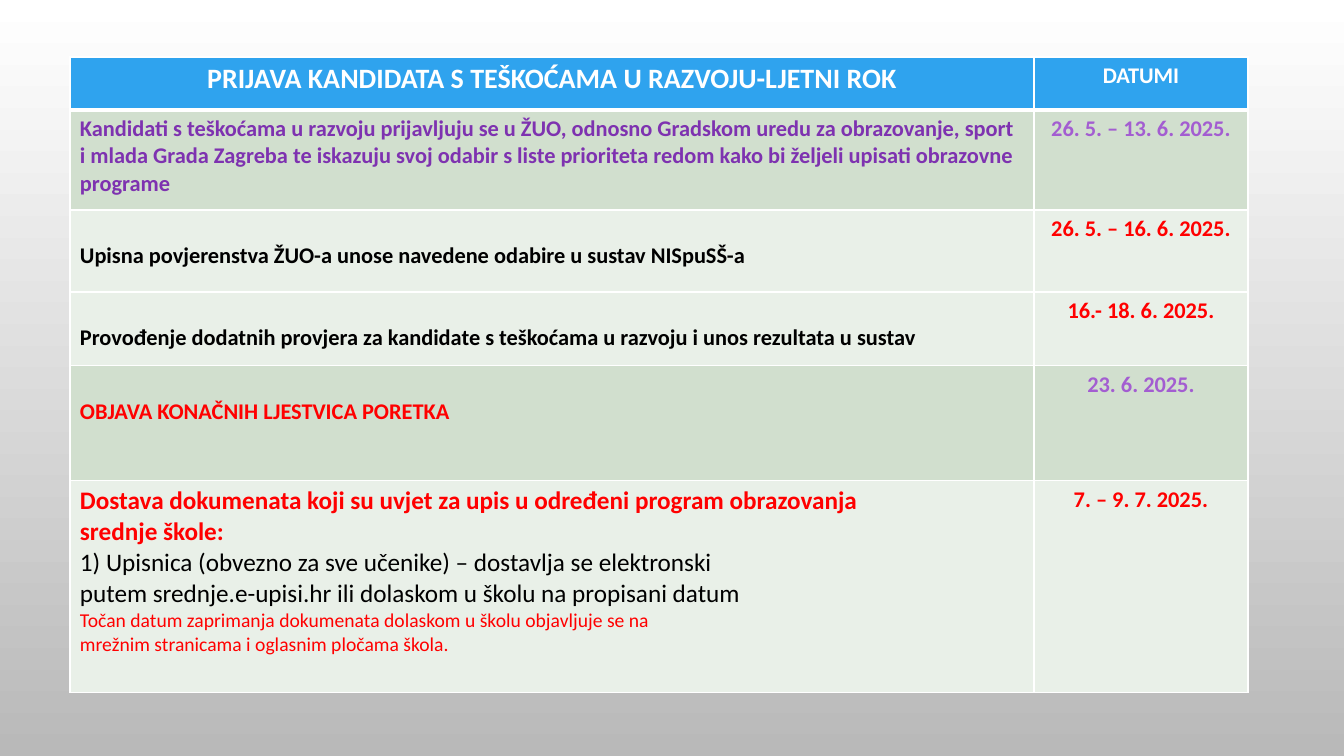
from lxml import etree
from pptx import Presentation
from pptx import util as u
from pptx.dml.color import RGBColor
from pptx.enum import text
from pptx.oxml import ns

WHITE = RGBColor(0xFF, 0xFF, 0xFF)
GREY = RGBColor(0xB9, 0xB9, 0xB9)
BLUE = RGBColor(0x2F, 0xA3, 0xEE)
SAGE = RGBColor(0xD1, 0xDF, 0xCE)
PALE = RGBColor(0xE9, 0xF0, 0xE8)
PURPLE = RGBColor(0x7E, 0x32, 0xB0)
LILAC = RGBColor(0xA3, 0x5D, 0xD1)
RED = RGBColor(0xFF, 0x00, 0x00)
BLACK = RGBColor(0x00, 0x00, 0x00)

LEFT, CENTER, JUSTIFY = (
    text.PP_ALIGN.LEFT, text.PP_ALIGN.CENTER, text.PP_ALIGN.JUSTIFY)

# Content: a line is (wording, size, bold, colour, alignment)
DOCUMENTS = [
    ("Dostava dokumenata koji su uvjet za upis u određeni program obrazovanja",
     18, True, RED, LEFT),
    ("srednje škole:", 18, True, RED, LEFT),
    ("1) Upisnica (obvezno za sve učenike) – dostavlja se elektronski",
     18, False, BLACK, LEFT),
    ("putem srednje.e-upisi.hr ili dolaskom u školu na propisani datum",
     18, False, BLACK, LEFT),
    ("Točan datum zaprimanja dokumenata dolaskom u školu objavljuje se na",
     14, False, RED, JUSTIFY),
    ("mrežnim stranicama i oglasnim pločama škola.", 14, False, RED, JUSTIFY),
]

# A row is (height, fill, top inset of the step, step lines, date, date colour)
SCHEDULE = [
    (53, BLUE, 5,
     [("PRIJAVA KANDIDATA S TEŠKOĆAMA U RAZVOJU-LJETNI ROK",
       20, True, WHITE, CENTER)],
     "DATUMI", WHITE),
    (100, SAGE, 5,
     [("Kandidati s teškoćama u razvoju prijavljuju se u ŽUO, odnosno Gradskom "
       "uredu za obrazovanje, sport i mlada Grada Zagreba te iskazuju svoj "
       "odabir s liste prioriteta redom kako bi željeli upisati obrazovne "
       "programe", 16, True, PURPLE, LEFT)],
     "26. 5. – 13. 6. 2025.", LILAC),
    (82, PALE, 32,
     [("Upisna povjerenstva ŽUO-a unose navedene odabire u sustav NISpuSŠ-a",
       16, True, BLACK, LEFT)],
     "26. 5. – 16. 6. 2025.", RED),
    (74, PALE, 32,
     [("Provođenje dodatnih provjera za kandidate s teškoćama u razvoju i unos "
       "rezultata u sustav", 16, True, BLACK, LEFT)],
     "16.- 18. 6. 2025.", RED),
    (115, SAGE, 32,
     [("OBJAVA KONAČNIH LJESTVICA PORETKA", 16, True, RED, LEFT)],
     "23. 6. 2025.", LILAC),
    (212, PALE, 5, DOCUMENTS, "7. – 9. 7. 2025.", RED),
]
COLUMNS = (964, 214)
TABLE_LEFT, TABLE_TOP = 70, 57
SLIDE_SIZE = (1344, 756)


def px(length):
    return u.Emu(round(length * 914400 / 100.8))


def set_attributes(target, values):
    for name, value in values.items():
        setattr(target, name, value)


def add_borders(cell, widths):
    properties = cell._tc.get_or_add_tcPr()
    for side, width in widths.items():
        line = etree.SubElement(
            properties, ns.qn(f"a:ln{side}"), w=str(u.Pt(width)))
        solid = etree.SubElement(line, ns.qn("a:solidFill"))
        etree.SubElement(solid, ns.qn("a:srgbClr"), val=str(WHITE))


def fill_cell(cell, lines, fill, top_inset, borders):
    add_borders(cell, borders)
    cell.fill.solid()
    cell.fill.fore_color.rgb = fill
    set_attributes(cell, {
        "margin_left": px(10), "margin_right": px(10),
        "margin_top": px(top_inset), "margin_bottom": px(5),
        "vertical_anchor": text.MSO_ANCHOR.TOP})
    for index, (wording, size, bold, colour, alignment) in enumerate(lines):
        frame = cell.text_frame
        paragraph = frame.add_paragraph() if index else frame.paragraphs[0]
        paragraph.alignment = alignment
        run = paragraph.add_run()
        run.text = wording
        set_attributes(run.font, {
            "name": "Calibri", "size": u.Pt(size), "bold": bold})
        run.font.color.rgb = colour


def main():
    deck = Presentation()
    deck.slide_width, deck.slide_height = map(px, SLIDE_SIZE)
    slide = deck.slides.add_slide(deck.slide_layouts[6])

    # Background gradient, white at the top
    backdrop = slide.background.fill
    backdrop.gradient()
    backdrop.gradient_angle = 270
    for stop, position, colour in zip(
            backdrop.gradient_stops, (0, 1), (WHITE, GREY)):
        stop.position = position
        stop.color.rgb = colour

    # Schedule table
    total_height = sum(row[0] for row in SCHEDULE)
    schedule = slide.shapes.add_table(
        len(SCHEDULE), len(COLUMNS), px(TABLE_LEFT), px(TABLE_TOP),
        px(sum(COLUMNS)), px(total_height)).table
    set_attributes(schedule, {"first_row": False, "horz_banding": False})
    for column, width in zip(schedule.columns, COLUMNS):
        column.width = px(width)

    # Steps on the left, dates on the right
    for index, (height, fill, inset, step, date, colour) in enumerate(SCHEDULE):
        schedule.rows[index].height = px(height)
        borders = {"L": 1, "R": 1,
                   "T": 3 if index == 1 else 1, "B": 3 if index == 0 else 1}
        date_lines = [(date, 16, True, colour, CENTER)]
        fill_cell(schedule.cell(index, 0), step, fill, inset, borders)
        fill_cell(schedule.cell(index, 1), date_lines, fill, 5, borders)

    deck.save("out.pptx")


if __name__ == "__main__":
    main()
